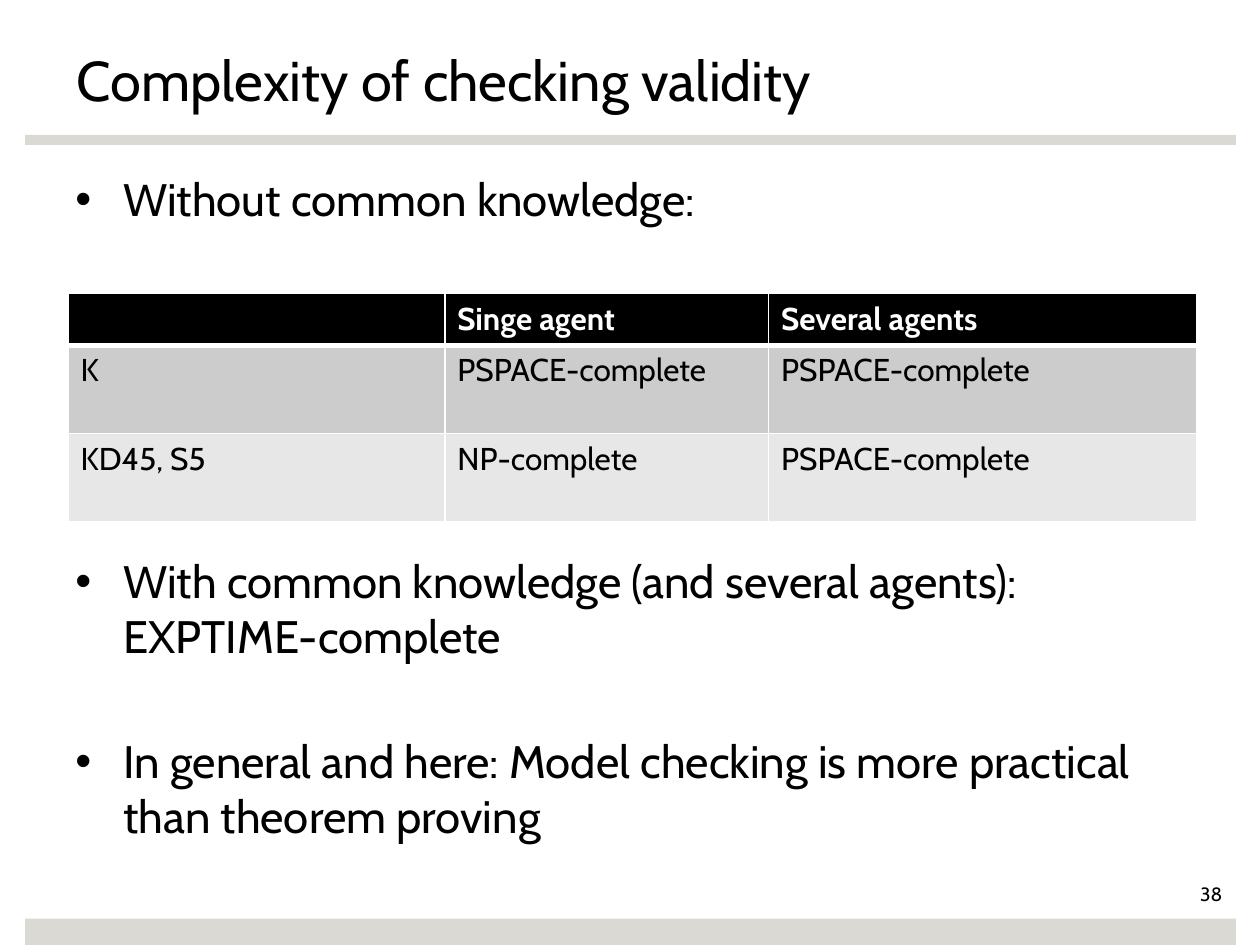
import pptx
import pptx.util
import pptx.dml.color
import pptx.enum.text
import pptx.enum.shapes
import pptx.oxml
import pptx.oxml.ns

Inches, Pt = pptx.util.Inches, pptx.util.Pt
RGB = pptx.dml.color.RGBColor
ALIGN = pptx.enum.text.PP_ALIGN
ANCHOR = pptx.enum.text.MSO_ANCHOR
BLACK, WHITE = RGB(0, 0, 0), RGB(255, 255, 255)
BAND = RGB(0xDA, 0xD9, 0xD3)
DARK, LIGHT = RGB(0xCC, 0xCC, 0xCC), RGB(0xE7, 0xE7, 0xE7)

ITEMS = [
    ("Without common knowledge:", 0),
    ("With common knowledge (and several agents): EXPTIME-complete", 187),
    ("In general and here: Model checking is more practical than theorem proving", 40.5),
]
ROWS = [
    ("", "Singe agent", "Several agents"),
    ("K", "PSPACE-complete", "PSPACE-complete"),
    ("KD45, S5", "NP-complete", "PSPACE-complete"),
]
FILLS = [BLACK, DARK, LIGHT]
WIDTHS = [2.99, 2.57, 3.4]
HEIGHTS = [0.41, 0.7, 0.7]


def apply(thing, **values):
    """Set each named attribute on the thing."""
    for name, value in values.items():
        setattr(thing, name, value)


def write(para, text, size, color=BLACK, bold=False):
    """Add one formatted run to a paragraph."""
    run = para.add_run()
    run.text = text
    apply(run.font, name="Cabin", size=Pt(size), bold=bold)
    run.font.color.rgb = color


def place(shape, box):
    """Move a shape to a box in inches."""
    sides = map(Inches, box)
    apply(shape, **dict(zip(("left", "top", "width", "height"), sides)))


def add_band(slide, box):
    """Draw a plain grey band."""
    kind = pptx.enum.shapes.MSO_SHAPE.RECTANGLE
    band = slide.shapes.add_shape(kind, *map(Inches, box))
    band.shadow.inherit = False
    band.fill.solid()
    band.fill.fore_color.rgb = BAND
    band.line.fill.background()


def add_title(slide, box, text):
    """Place and format the title."""
    title = slide.shapes.title
    place(title, box)
    frame = title.text_frame
    apply(frame, word_wrap=True, vertical_anchor=ANCHOR.TOP,
          auto_size=pptx.enum.text.MSO_AUTO_SIZE.NONE, margin_top=Inches(0.08))
    frame.paragraphs[0].alignment = ALIGN.LEFT
    write(frame.paragraphs[0], text, 32)


def add_list(slide, box, items):
    """Write the bulleted points with their gaps."""
    frame = slide.shapes.add_textbox(*map(Inches, box)).text_frame
    frame.word_wrap = True
    for index, (text, gap) in enumerate(items):
        para = frame.add_paragraph() if index else frame.paragraphs[0]
        props = para._p.get_or_add_pPr()
        props.set("marL", str(Inches(0.38)))
        props.set("indent", str(Inches(-0.38)))
        for tag, key, value in (("buFont", "typeface", "Arial"), ("buChar", "char", "•")):
            pptx.oxml.ns.qn("a:" + tag)
            mark = props.makeelement(pptx.oxml.ns.qn("a:" + tag), {key: value})
            props.append(mark)
        if gap:
            para.space_before = Pt(gap)
        write(para, text, 26)


def edge(cell, row):
    """Give a cell white borders, thick under the header."""
    props = cell._tc.get_or_add_tcPr()
    widths = {"L": 1, "R": 1, "T": 3 if row == 1 else 1, "B": 1 if row else 3}
    for index, (side, width) in enumerate(widths.items()):
        line = pptx.oxml.parse_xml(
            f'<a:ln{side} {pptx.oxml.ns.nsdecls("a")} w="{Pt(width)}">'
            f'<a:solidFill><a:srgbClr val="{WHITE}"/></a:solidFill></a:ln{side}>')
        props.insert(index, line)


def add_grid(slide, box, rows):
    """Build the table of complexity classes."""
    table = slide.shapes.add_table(len(rows), len(WIDTHS), *map(Inches, box)).table
    for column, width in zip(table.columns, WIDTHS):
        column.width = Inches(width)
    for r, (texts, fill) in enumerate(zip(rows, FILLS)):
        table.rows[r].height = Inches(HEIGHTS[r])
        for c, text in enumerate(texts):
            cell = table.cell(r, c)
            cell.fill.solid()
            cell.fill.fore_color.rgb = fill
            edge(cell, r)
            if text:
                color = BLACK if r else WHITE
                write(cell.text_frame.paragraphs[0], text, 18, color, r == 0)


def add_number(slide, box, text):
    """Write the page number."""
    frame = slide.shapes.add_textbox(*map(Inches, box)).text_frame
    apply(frame, word_wrap=True, margin_left=0, margin_top=0,
          margin_right=Inches(0.1), margin_bottom=0)
    frame.paragraphs[0].alignment = ALIGN.RIGHT
    write(frame.paragraphs[0], text, 11)


def main():
    """Build and save the slide."""
    deck = pptx.Presentation()
    apply(deck, slide_width=Inches(10), slide_height=Inches(7.5))
    slide = deck.slides.add_slide(deck.slide_layouts.get_by_name("Title Only"))
    add_band(slide, (0.2, 1.07, 9.61, 0.08))
    add_band(slide, (0.2, 7.29, 9.61, 0.21))
    add_title(slide, (0.51, 0.28, 9, 0.55), "Complexity of checking validity")
    add_list(slide, (0.5, 1.31, 9, 5.43), ITEMS)
    add_number(slide, (8.7, 7, 1.1, 0.22), "38")
    add_grid(slide, (0.54, 2.33, sum(WIDTHS), sum(HEIGHTS)), ROWS)
    deck.save("out.pptx")


if __name__ == "__main__":
    main()
